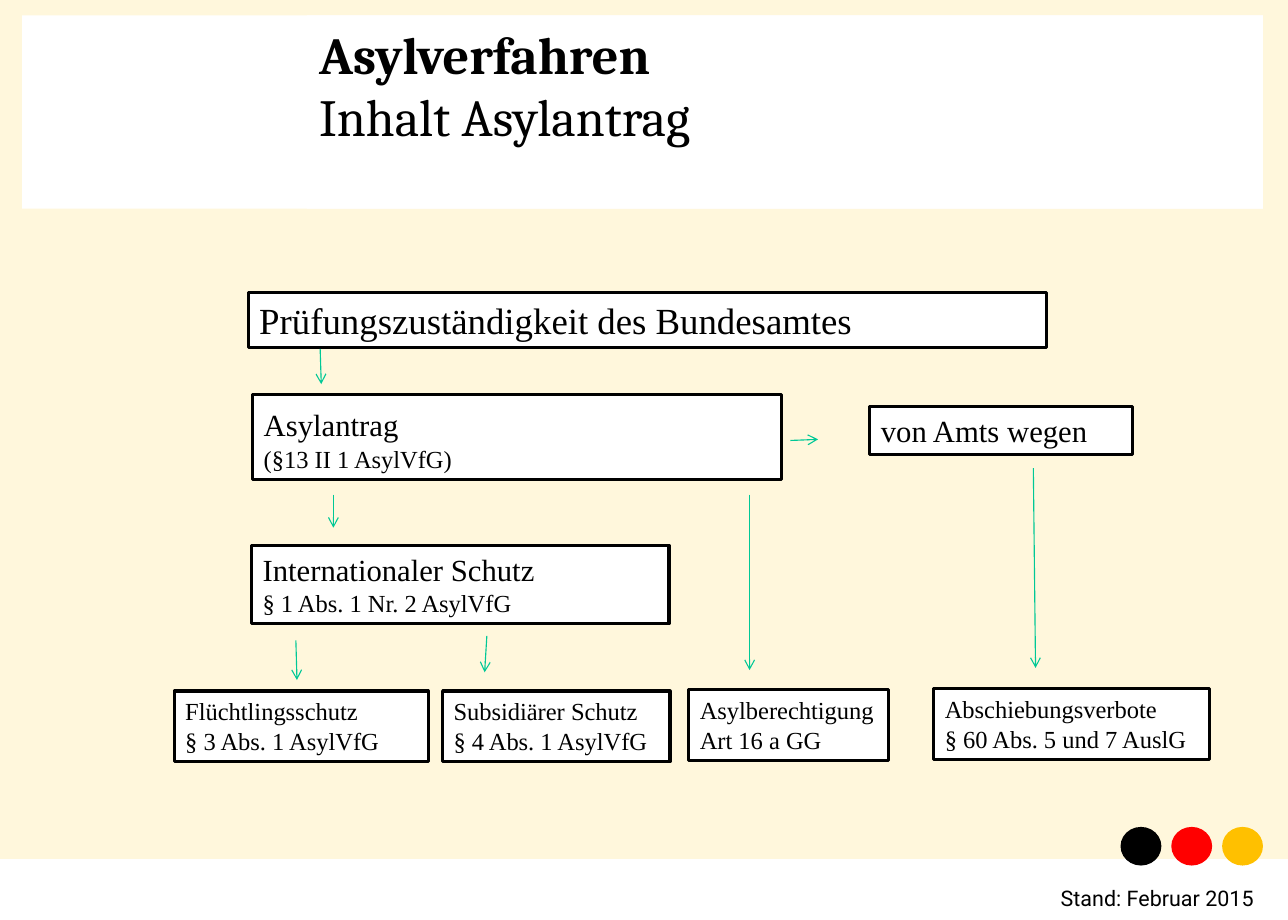
from lxml.etree import SubElement
from pptx import Presentation
from pptx.dml.color import RGBColor
from pptx.enum.shapes import MSO_CONNECTOR, MSO_SHAPE
from pptx.enum.text import MSO_ANCHOR, MSO_AUTO_SIZE, PP_ALIGN
from pptx.oxml.ns import qn
from pptx.util import Inches, Pt

COLORS = {
    "cream": "FFF7DC",
    "white": "FFFFFF",
    "black": "000000",
    "red": "FF0000",
    "gold": "FFC000",
    "green": "00C896",
}


def add_filled(kind, left, top, width, height, color):
    shape = page.shapes.add_shape(
        kind, Inches(left), Inches(top), Inches(width), Inches(height))
    shape.shadow.inherit = False
    shape.fill.solid()
    shape.fill.fore_color.rgb = RGBColor.from_string(COLORS[color])
    shape.line.fill.background()
    return shape


def set_font(font, name, size):
    font.name = name
    font.size = Pt(size)
    font.color.rgb = RGBColor.from_string(COLORS["black"])


# Page in the ratio 7:5
deck = Presentation()
deck.slide_width = Inches(35 / 3)
deck.slide_height = Inches(25 / 3)
page = deck.slides.add_slide(deck.slide_layouts[5])

# Background, header band and flag dots
add_filled(MSO_SHAPE.RECTANGLE, 0, 0, 35 / 3, 7.78, "cream")
add_filled(MSO_SHAPE.RECTANGLE, 0.2, 0.14, 11.24, 1.75, "white")
for index, color in enumerate(["black", "red", "gold"]):
    add_filled(MSO_SHAPE.OVAL, 10.15 + 0.46 * index, 7.49, 0.37, 0.35, color)

# Date of issue
stand = page.shapes.add_textbox(
    Inches(9.51), Inches(7.97), Inches(2.1), Inches(0.35))
stand.text_frame.word_wrap = True
para = stand.text_frame.paragraphs[0]
para.text = "Stand: Februar 2015"
set_font(para.font, "Roboto", 14)

# Title, in front of the header band
title = page.shapes.title
page.shapes._spTree.append(title._element)
title.left, title.top = Inches(2.78), Inches(0.14)
title.width, title.height = Inches(8.66), Inches(1.75)
title.fill.solid()
title.fill.fore_color.rgb = RGBColor.from_string(COLORS["white"])
frame = title.text_frame
frame.word_wrap = True
frame.auto_size = MSO_AUTO_SIZE.NONE
frame.vertical_anchor = MSO_ANCHOR.TOP
frame.margin_left = frame.margin_right = Inches(0.11)
frame.margin_top = frame.margin_bottom = Inches(0.06)
para = frame.paragraphs[0]
para.alignment = PP_ALIGN.LEFT
set_font(para.font, "Cambria", 34)
span = para.add_run()
span.text = "Asylverfahren"
span.font.bold = True
para.add_line_break()
span = para.add_run()
span.text = "Inhalt Asylantrag"
span.font.bold = False

# Boxes: left, top, width, height, lines of (text, size)
boxes = [
    (2.25, 2.65, 7.23, 0.5, [("Prüfungszuständigkeit des Bundesamtes", 24)]),
    (2.29, 3.57, 4.79, 0.77, [("Asylantrag", 20), ("(§13 II 1 AsylVfG)", 16)]),
    (7.88, 3.68, 2.38, 0.44, [("von Amts wegen", 20)]),
    (2.28, 4.94, 3.78, 0.71,
     [("Internationaler Schutz", 20), ("§ 1 Abs. 1 Nr. 2 AsylVfG", 16)]),
    (1.58, 6.26, 2.3, 0.64,
     [("Flüchtlingsschutz", 16), ("§ 3 Abs. 1 AsylVfG", 16)]),
    (4.01, 6.26, 2.06, 0.64,
     [("Subsidiärer Schutz", 16), ("§ 4 Abs. 1 AsylVfG", 16)]),
    (6.24, 6.25, 1.81, 0.64, [("Asylberechtigung", 16), ("Art 16 a GG", 16)]),
    (8.46, 6.24, 2.5, 0.64,
     [("Abschiebungsverbote", 16), ("§ 60 Abs. 5 und 7 AuslG", 16)]),
]
for left, top, width, height, lines in boxes:
    box = add_filled(MSO_SHAPE.RECTANGLE, left, top, width, height, "white")
    box.line.color.rgb = RGBColor.from_string(COLORS["black"])
    box.line.width = Pt(2)
    frame = box.text_frame
    frame.word_wrap = True
    frame.auto_size = MSO_AUTO_SIZE.SHAPE_TO_FIT_TEXT
    frame.vertical_anchor = MSO_ANCHOR.TOP
    for index, (text, size) in enumerate(lines):
        para = frame.paragraphs[0] if index == 0 else frame.add_paragraph()
        para.text = text
        para.alignment = PP_ALIGN.LEFT
        set_font(para.font, "Times New Roman", size)
        if text == "Asylantrag":
            # A larger trailing space gives this line its height
            span = para.add_run()
            span.text = " "
            span.font.size = Pt(24)

# Arrows: start x, start y, end x, end y
arrows = [
    (2.9, 3.16, 2.91, 3.48),
    (7.16, 3.99, 7.41, 3.98),
    (3.02, 4.48, 3.02, 4.78),
    (2.68, 5.8, 2.69, 6.16),
    (4.41, 5.76, 4.39, 6.09),
    (6.79, 4.48, 6.79, 6.07),
    (9.36, 4.24, 9.38, 6.05),
]
for ends in arrows:
    arrow = page.shapes.add_connector(
        MSO_CONNECTOR.STRAIGHT, *[Inches(value) for value in ends])
    arrow.line.color.rgb = RGBColor.from_string(COLORS["green"])
    arrow.line.width = Pt(0.75)
    SubElement(arrow.line._get_or_add_ln(), qn("a:tailEnd"), type="arrow")
    SubElement(arrow._element.spPr, qn("a:effectLst"))

deck.save("out.pptx")
